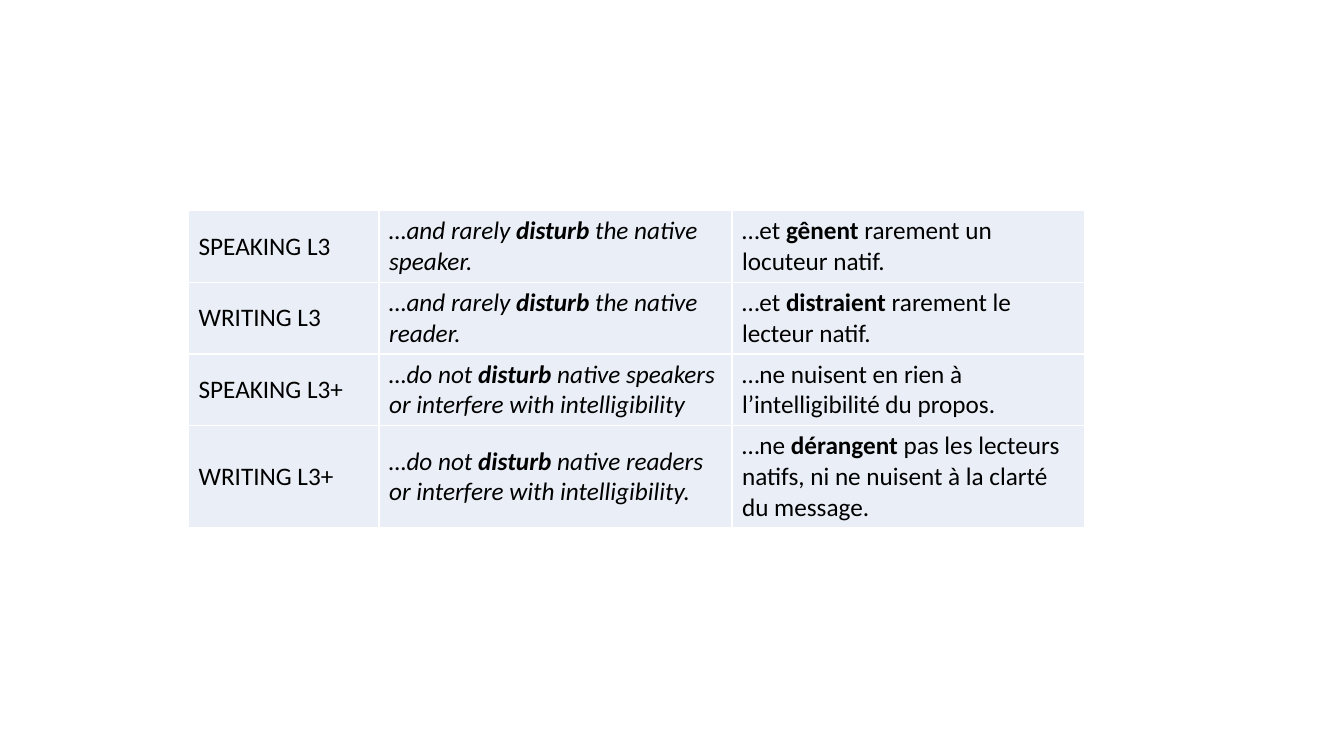
from lxml import etree
from pptx import Presentation
from pptx.dml.color import RGBColor
from pptx.enum.text import MSO_ANCHOR
from pptx.oxml.ns import qn
from pptx.util import Inches, Pt

MIDDLE = MSO_ANCHOR.MIDDLE
BLANK_LAYOUT = 6
FONT = "Calibri"
TEXT_COLOR = "000000"
CELL_COLOR = "EAEFF7"
BORDER_COLOR = "FFFFFF"
ENGLISH_COLUMN = 1

COLUMN_WIDTHS = [1.89, 3.5, 3.5]
ROW_HEIGHTS = [0.71, 0.71, 0.71, 1.01]
DESCRIPTORS = [
    ("SPEAKING L3",
     "…and rarely *disturb* the native speaker.",
     "…et *gênent* rarement un locuteur natif."),
    ("WRITING L3",
     "…and rarely *disturb* the native reader.",
     "…et *distraient* rarement le lecteur natif."),
    ("SPEAKING L3+",
     "…do not *disturb* native speakers or interfere with intelligibility",
     "…ne nuisent en rien à l’intelligibilité du propos."),
    ("WRITING L3+",
     "…do not *disturb* native readers or interfere with intelligibility.",
     "…ne *dérangent* pas les lecteurs natifs, ni ne nuisent à la clarté du message."),
]


def color(hex_string):
    return RGBColor.from_string(hex_string)


def add_borders(cell):
    properties = cell._tc.get_or_add_tcPr()
    for position, side in enumerate(("a:lnL", "a:lnR", "a:lnT", "a:lnB")):
        border = etree.Element(qn(side), w=str(Pt(1)))
        fill = etree.SubElement(border, qn("a:solidFill"))
        etree.SubElement(fill, qn("a:srgbClr"), val=BORDER_COLOR)
        properties.insert(position, border)


def write_descriptor(cell, descriptor, italic):
    cell.vertical_anchor = MIDDLE
    cell.fill.solid()
    cell.fill.fore_color.rgb = color(CELL_COLOR)
    add_borders(cell)
    paragraph = cell.text_frame.paragraphs[0]
    for index, phrase in enumerate(descriptor.split("*")):
        run = paragraph.add_run()
        run.text = phrase
        run.font.name = FONT
        run.font.size = Pt(18)
        run.font.color.rgb = color(TEXT_COLOR)
        run.font.bold = index % 2 == 1
        run.font.italic = italic


def add_descriptor_table(slide, left, top, width, height):
    table = slide.shapes.add_table(
        len(DESCRIPTORS), len(COLUMN_WIDTHS),
        Inches(left), Inches(top), Inches(width), Inches(height)).table
    table.first_row = False
    table.horz_banding = False
    for column, share in zip(table.columns, COLUMN_WIDTHS):
        column.width = Inches(width * share / sum(COLUMN_WIDTHS))
    for row, share in zip(table.rows, ROW_HEIGHTS):
        row.height = Inches(height * share / sum(ROW_HEIGHTS))
    for row, descriptors in zip(table.rows, DESCRIPTORS):
        for index, descriptor in enumerate(descriptors):
            write_descriptor(row.cells[index], descriptor, index == ENGLISH_COLUMN)


def main():
    presentation = Presentation()
    presentation.slide_width = Inches(13.33)
    presentation.slide_height = Inches(7.5)
    slide = presentation.slides.add_slide(presentation.slide_layouts[BLANK_LAYOUT])
    add_descriptor_table(slide, 1.87, 2.09, sum(COLUMN_WIDTHS), sum(ROW_HEIGHTS))
    presentation.save("out.pptx")


if __name__ == "__main__":
    main()
